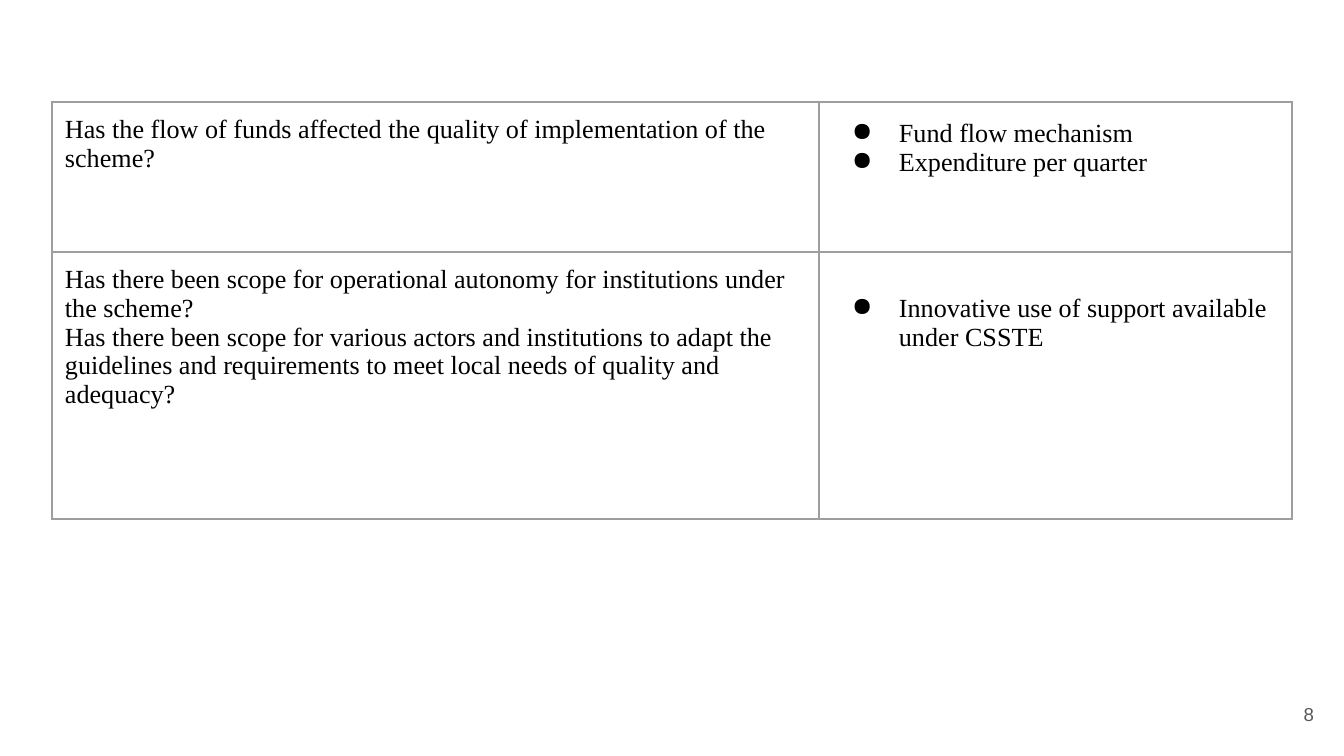
from lxml.etree import SubElement as Sub
from pptx import Presentation
from pptx.dml.color import RGBColor
from pptx.enum.text import MSO_ANCHOR, PP_ALIGN
from pptx.oxml.ns import qn
from pptx.util import Pt

PX = 6804  # EMU in one px
PAD = 13 * PX
BLACK = RGBColor(0, 0, 0)
GREY = RGBColor(0x59, 0x59, 0x59)
LINE = RGBColor(0x9E, 0x9E, 0x9E)

COLS = [767, 473]
ROWS = [150, 267]
CELLS = [
    ["Has the flow of funds affected the quality of implementation of the scheme?",
     "Fund flow mechanism\nExpenditure per quarter"],
    ["Has there been scope for operational autonomy for institutions under the scheme?\n"
     "Has there been scope for various actors and institutions to adapt the guidelines "
     "and requirements to meet local needs of quality and adequacy?",
     "Innovative use of support available under CSSTE"],
]


def style(par, font, size, color):
    for run in par.runs:
        run.font.name = font
        run.font.size = Pt(size)
        run.font.color.rgb = color


def border(cell):
    props = cell._tc.get_or_add_tcPr()
    for side in ("a:lnL", "a:lnR", "a:lnT", "a:lnB"):
        line = Sub(props, qn(side), w=str(Pt(0.75)))
        fill = Sub(line, qn("a:solidFill"))
        Sub(fill, qn("a:srgbClr"), val=str(LINE))


prs = Presentation()
prs.slide_width = 1344 * PX
prs.slide_height = 756 * PX
slide = prs.slides.add_slide(prs.slide_layouts[6])

# Table of questions and indicators
table = slide.shapes.add_table(
    len(ROWS), len(COLS), 52 * PX, 102 * PX, sum(COLS) * PX, sum(ROWS) * PX).table
table.first_row = table.horz_banding = False
for col, width in zip(table.columns, COLS):
    col.width = width * PX
for row, height in zip(table.rows, ROWS):
    row.height = height * PX

for r, texts in enumerate(CELLS):
    for c, text in enumerate(texts):
        cell = table.cell(r, c)
        border(cell)
        cell.fill.background()
        cell.margin_left = cell.margin_right = PAD
        cell.margin_top = cell.margin_bottom = PAD
        cell.text_frame.text = text
        for par in cell.text_frame.paragraphs:
            style(par, "Times New Roman", 14, BLACK)
            if c == 1:
                props = par._p.get_or_add_pPr()
                props.set("marL", str(67 * PX))
                props.set("indent", str(-47 * PX))
                Sub(props, qn("a:buChar"), char="●")

# The first bullet has a looser line, the last one starts a line lower
table.cell(0, 1).text_frame.paragraphs[0].line_spacing = 1.15
table.cell(1, 1).margin_top = 42 * PX

# Page number
box = slide.shapes.add_textbox(1246 * PX, 685 * PX, 81 * PX, 58 * PX)
frame = box.text_frame
frame.word_wrap = True
frame.vertical_anchor = MSO_ANCHOR.MIDDLE
frame.margin_left = frame.margin_right = PAD
frame.margin_top = frame.margin_bottom = PAD
frame.text = "8"
par = frame.paragraphs[0]
par.alignment = PP_ALIGN.RIGHT
style(par, "Arial", 10, GREY)

prs.save("out.pptx")
